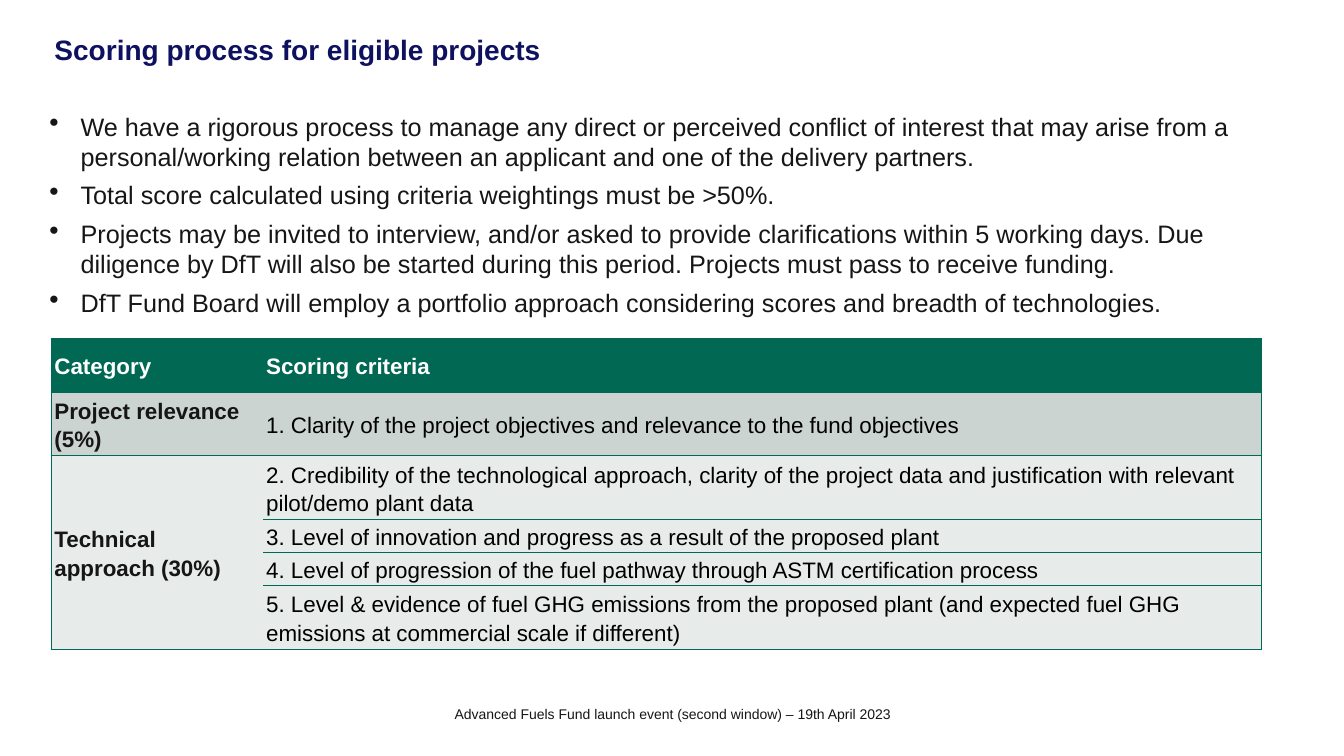
from dataclasses import dataclass

from lxml import etree
from pptx import Presentation, util as u
from pptx.dml.color import RGBColor
from pptx.enum import text
from pptx.oxml import ns

# Content
TITLE = "Scoring process for eligible projects"
BULLETS = [
    "We have a rigorous process to manage any direct or perceived conflict of interest that may "
    "arise from a personal/working relation between an applicant and one of the delivery partners.",
    "Total score calculated using criteria weightings must be >50%.",
    "Projects may be invited to interview, and/or asked to provide clarifications within 5 working "
    "days. Due diligence by DfT will also be started during this period. Projects must pass to "
    "receive funding.",
    "DfT Fund Board will employ a portfolio approach considering scores and breadth of technologies.",
]
HEADINGS = ("Category", "Scoring criteria")
CATEGORIES = [
    ("Project relevance (5%)", [
        "1. Clarity of the project objectives and relevance to the fund objectives",
    ]),
    ("Technical approach (30%)", [
        "2. Credibility of the technological approach, clarity of the project data and "
        "justification with relevant pilot/demo plant data",
        "3. Level of innovation and progress as a result of the proposed plant",
        "4. Level of progression of the fuel pathway through ASTM certification process",
        "5. Level & evidence of fuel GHG emissions from the proposed plant (and expected fuel GHG "
        "emissions at commercial scale if different)",
    ]),
]
FOOTER = "Advanced Fuels Fund launch event (second window) – 19th April 2023"

# Layout in px, 100 to the inch
PX = 9144
SLIDE = (1333, 750)
TITLE_AT = (54, 36, 1085, 137)
BULLETS_AT = (49, 110, 1193, 218)
FOOTER_AT = (388, 695, 558, 20)
TABLE_AT = (51, 336, 1200, 294)
COLUMN_WIDTHS = (210, 990)
HEADER_HEIGHT, ROW_HEIGHT = 53, 21
BULLET_INDENT = 31
CELL_MARGINS = (3, 1)
NO_STYLE = "{2D5ABB26-0587-4C30-8999-92F81FD0307C}"


@dataclass(frozen=True)
class Theme:
    font: str = "Arial"
    navy: str = "0E115F"
    ink: str = "161616"
    black: str = "000000"
    white: str = "FFFFFF"
    green: str = "006853"
    bands: tuple = ("CBD4D1", "E7EBE9")
    title_size: int = 20
    body_size: int = 18
    table_size: int = 16
    footer_size: int = 10


THEME = Theme()


def emu(lengths):
    return [length * PX for length in lengths]


def style(para, size, color, bold=False):
    font = para.font
    font.name, font.size, font.bold = THEME.font, u.Pt(size), bold
    font.color.rgb = RGBColor.from_string(color)


def clear_margins(frame):
    frame.margin_left = frame.margin_right = frame.margin_top = frame.margin_bottom = 0


def add_text_box(page, place):
    frame = page.shapes.add_textbox(*emu(place)).text_frame
    frame.word_wrap = True
    return frame


def add_bullet(para):
    props = para._p.get_or_add_pPr()
    props.set("marL", str(BULLET_INDENT * PX))
    props.set("indent", str(-BULLET_INDENT * PX))
    etree.SubElement(props, ns.qn("a:buSzPct"), val="110000")
    etree.SubElement(props, ns.qn("a:buChar"), char="•")


def add_borders(cell, sides):
    props = cell._tc.get_or_add_tcPr()
    for side in sides:
        line = etree.SubElement(props, ns.qn(f"a:ln{side}"), w=str(u.Pt(1)))
        fill = etree.SubElement(line, ns.qn("a:solidFill"))
        etree.SubElement(fill, ns.qn("a:srgbClr"), val=THEME.green)


def format_cell(cell, fill, sides):
    add_borders(cell, sides)
    cell.fill.solid()
    cell.fill.fore_color.rgb = RGBColor.from_string(fill)
    cell.margin_left = cell.margin_right = CELL_MARGINS[0] * PX
    cell.margin_top = cell.margin_bottom = CELL_MARGINS[1] * PX
    cell.vertical_anchor = text.MSO_ANCHOR.MIDDLE


def write_cell(cell, words, color, bold):
    cell.text = words
    para = cell.text_frame.paragraphs[0]
    para.line_spacing, para.space_after = 1.15, u.Pt(8)
    style(para, THEME.table_size, color, bold)


def add_title(page):
    box = page.shapes.title
    box.left, box.top, box.width, box.height = emu(TITLE_AT)
    frame = box.text_frame
    frame.text = TITLE
    frame.vertical_anchor = text.MSO_ANCHOR.TOP
    frame.auto_size = text.MSO_AUTO_SIZE.NONE
    clear_margins(frame)
    para = frame.paragraphs[0]
    para.alignment, para.line_spacing = text.PP_ALIGN.LEFT, 0.9
    style(para, THEME.title_size, THEME.navy, True)


def add_bullets(page):
    frame = add_text_box(page, BULLETS_AT)
    clear_margins(frame)
    frame.text = "\n".join(BULLETS)
    for para in frame.paragraphs:
        add_bullet(para)
        para.space_after = u.Pt(6)
        style(para, THEME.body_size, THEME.ink)


def add_footer(page):
    frame = add_text_box(page, FOOTER_AT)
    frame.text = FOOTER
    para = frame.paragraphs[0]
    para.alignment = text.PP_ALIGN.CENTER
    style(para, THEME.footer_size, THEME.ink)


def add_scoring_table(page):
    row_count = 1 + sum(len(criteria) for _, criteria in CATEGORIES)
    table = page.shapes.add_table(row_count, len(HEADINGS), *emu(TABLE_AT)).table
    table.first_row = table.horz_banding = False
    table._tbl.tblPr.find(ns.qn("a:tableStyleId")).text = NO_STYLE
    for column, width in zip(table.columns, COLUMN_WIDTHS):
        column.width = width * PX
    for index, row in enumerate(table.rows):
        row.height = (ROW_HEIGHT if index else HEADER_HEIGHT) * PX

    # Header row
    for column, heading in enumerate(HEADINGS):
        cell = table.cell(0, column)
        format_cell(cell, THEME.green, "RTB" if column else "LTB")
        write_cell(cell, heading, THEME.white, True)

    # One merged category cell beside its criteria
    top = 1
    for (category, criteria), band in zip(CATEGORIES, THEME.bands):
        label = table.cell(top, 0)
        format_cell(label, band, "LTB")
        write_cell(label, category, THEME.ink, True)
        if len(criteria) > 1:
            label.merge(table.cell(top + len(criteria) - 1, 0))
        for row, criterion in enumerate(criteria, top):
            cell = table.cell(row, 1)
            format_cell(cell, band, "RTB")
            write_cell(cell, criterion, THEME.black, False)
        top += len(criteria)


def main():
    deck = Presentation()
    deck.slide_width, deck.slide_height = emu(SLIDE)
    page = deck.slides.add_slide(deck.slide_layouts[5])
    add_title(page)
    add_bullets(page)
    add_footer(page)
    add_scoring_table(page)
    deck.save("out.pptx")


if __name__ == "__main__":
    main()
